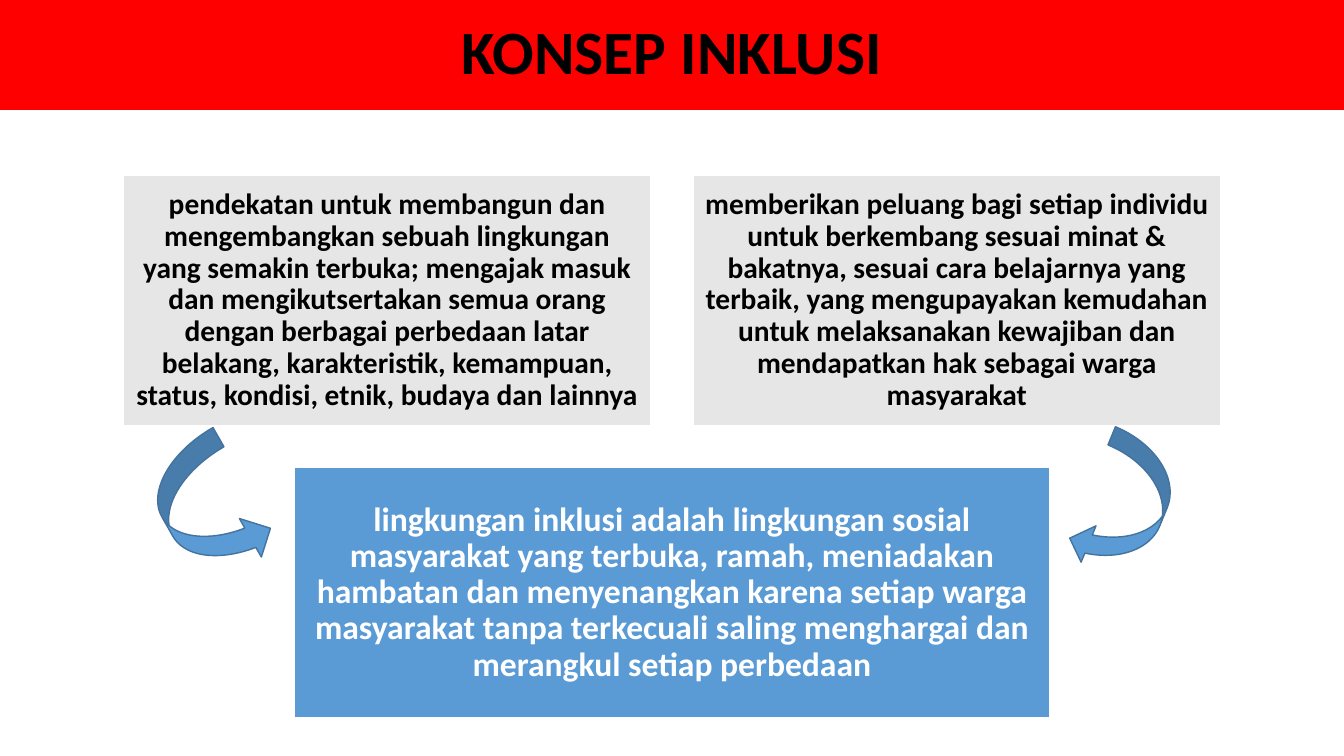
from pptx import Presentation
from pptx import util as u
from pptx.dml.color import RGBColor
from pptx.enum import shapes, text

COLORS = {
    "red": "FF0000", "gray": "E7E6E6", "blue": "5B9BD5",
    "edge": "43739E", "black": "000000", "white": "FFFFFF",
}
TITLE = "KONSEP INKLUSI"
IDEAS = [
    "pendekatan untuk membangun dan mengembangkan sebuah lingkungan yang "
    "semakin terbuka; mengajak masuk dan mengikutsertakan semua orang dengan "
    "berbagai perbedaan latar belakang, karakteristik, kemampuan, status, "
    "kondisi, etnik, budaya dan lainnya",
    "memberikan peluang bagi setiap individu untuk berkembang sesuai minat & "
    "bakatnya, sesuai cara belajarnya yang terbaik, yang mengupayakan "
    "kemudahan untuk melaksanakan kewajiban dan mendapatkan hak sebagai warga "
    "masyarakat",
]
RESULT = (
    "lingkungan inklusi adalah lingkungan sosial masyarakat yang terbuka, "
    "ramah, meniadakan hambatan dan menyenangkan karena setiap warga "
    "masyarakat tanpa terkecuali saling menghargai dan merangkul setiap "
    "perbedaan"
)
KIND = shapes.MSO_SHAPE
ARROWS = [
    (KIND.CURVED_RIGHT_ARROW, (1.63, 4.37, 0.88, 1.37), 330.3),
    (KIND.CURVED_LEFT_ARROW, (10.77, 4.33, 0.78, 1.39), 22.3),
]
WIDE, HIGH = 13.33, 7.5
IDEA_W, BOX_H, GAP = 5.23, 2.48, 0.42
IDEA_TOP, RESULT_W = 1.74, 7.49

deck = Presentation()
deck.slide_width, deck.slide_height = u.Inches(WIDE), u.Inches(HIGH)
slide = deck.slides.add_slide(deck.slide_layouts[6])


def color(name):
    return RGBColor.from_string(COLORS[name])


def add_shape(kind, place, fill, line=None, turn=0):
    shape = slide.shapes.add_shape(kind, *map(u.Inches, place))
    shape.shadow.inherit = False
    shape.rotation = turn
    shape.fill.solid()
    shape.fill.fore_color.rgb = color(fill)
    if line:
        shape.line.color.rgb = color(line)
        shape.line.width = u.Pt(1)
    else:
        shape.line.fill.background()
    return shape


def write(shape, words, size, ink="black", inset=0.09):
    frame = shape.text_frame
    frame.word_wrap = True
    frame.vertical_anchor = text.MSO_ANCHOR.MIDDLE
    frame.margin_left = frame.margin_right = u.Inches(inset)
    frame.margin_top = frame.margin_bottom = u.Inches(inset)
    para = frame.paragraphs[0]
    para.alignment = text.PP_ALIGN.CENTER
    para.line_spacing = 0.9
    run = para.add_run()
    run.text = words
    run.font.name, run.font.size, run.font.bold = "Calibri", u.Pt(size), True
    run.font.color.rgb = color(ink)


banner = add_shape(KIND.RECTANGLE, (0, 0, WIDE, 1.09), "red")
write(banner, TITLE, 44)

left = (WIDE - 2 * IDEA_W - GAP) / 2
for i, idea in enumerate(IDEAS):
    place = (left + i * (IDEA_W + GAP), IDEA_TOP, IDEA_W, BOX_H)
    write(add_shape(KIND.RECTANGLE, place, "gray", "white"), idea, 21)

place = ((WIDE - RESULT_W) / 2, IDEA_TOP + BOX_H + GAP, RESULT_W, BOX_H)
box = add_shape(KIND.RECTANGLE, place, "blue", "white")
write(box, RESULT, 24, ink="white", inset=0.1)

for kind, place, turn in ARROWS:
    add_shape(kind, place, "blue", "edge", turn)

deck.save("out.pptx")
